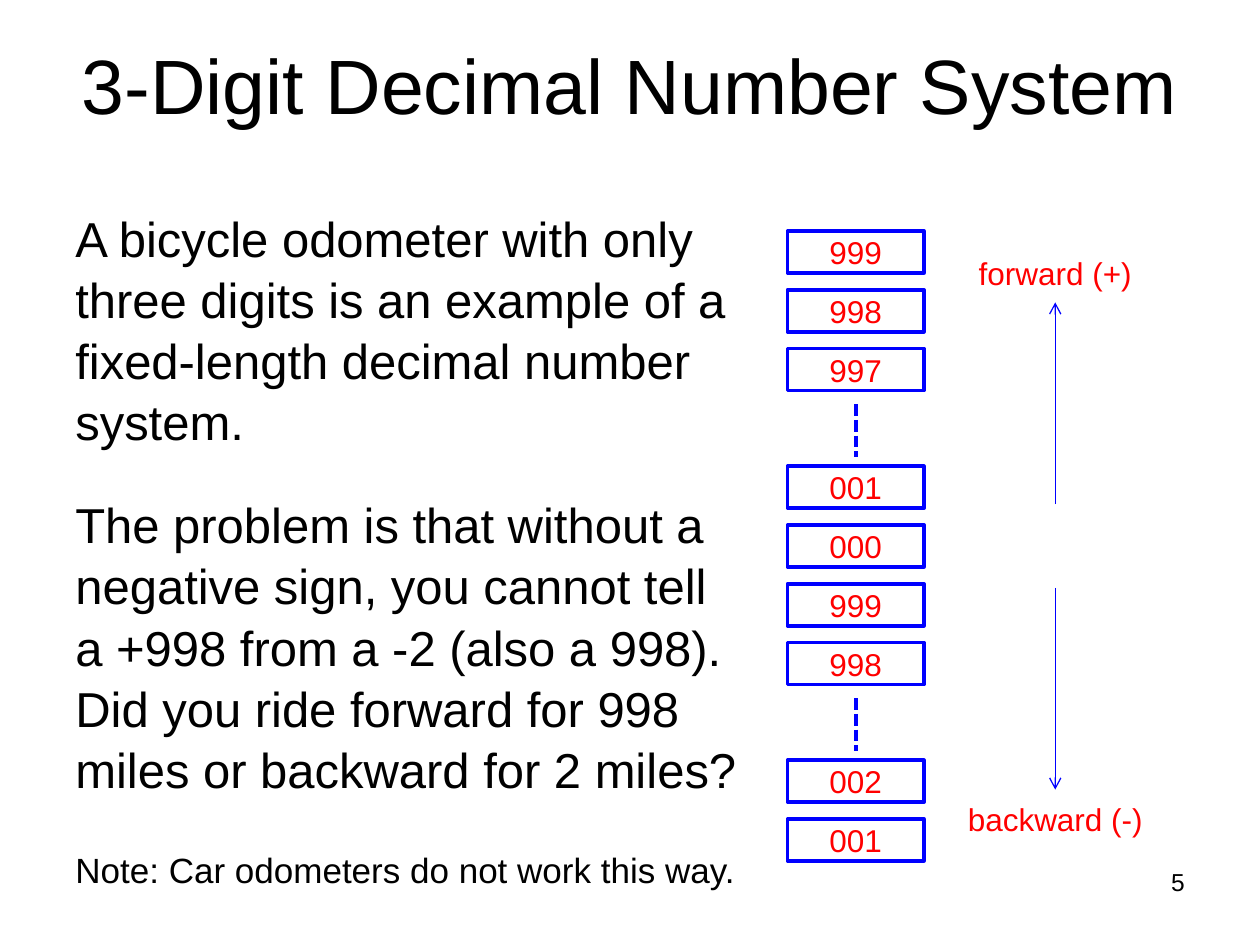
from dataclasses import dataclass
from typing import NamedTuple

from lxml.etree import SubElement
from pptx import Presentation
from pptx.dml.color import RGBColor
from pptx.enum.dml import MSO_LINE
from pptx.enum.shapes import MSO_CONNECTOR, MSO_SHAPE
from pptx.enum.text import MSO_ANCHOR, PP_ALIGN
from pptx.oxml.ns import qn
from pptx.util import Inches, Pt


@dataclass(frozen=True)
class Theme:
    font: str = "Arial"
    ink: RGBColor = RGBColor(0, 0, 0)
    accent: RGBColor = RGBColor(255, 0, 0)
    outline: RGBColor = RGBColor(0, 0, 255)
    title: int = 44
    body: int = 28
    note: int = 20
    label: int = 18
    number: int = 14


class Area(NamedTuple):
    column: float
    row: float
    columns: float
    rows: float


class Line(NamedTuple):
    text: str
    size: int
    before: float = 0
    after: float = 0
    spacing: float = 1.0


class Arrow(NamedTuple):
    label: str
    label_area: Area
    start: float
    end: float


THEME = Theme()

# The slide is a grid of 120 columns and 90 rows
UNIT = Inches(10) / 120
COUNTER = Area(75, 22, 13, 4)
COUNTER_STEP = 5.6
COUNTER_AXIS = COUNTER.column + COUNTER.columns / 2
ARROW_AXIS = 100.5
GAP = None
READINGS = ["999", "998", "997", GAP, "001", "000", "999", "998", GAP, "002", "001"]

BODY = [
    Line("A bicycle odometer with only three digits is an example of a "
         "fixed-length decimal number system.", THEME.body, after=24, spacing=1.04),
    Line("The problem is that without a negative sign, you cannot tell a +998 "
         "from a -2 (also a 998). Did you ride forward for 998 miles or "
         "backward for 2 miles?", THEME.body, after=24, spacing=1.04),
    Line("Note: Car odometers do not work this way.", THEME.note, before=4, spacing=1.04),
]
ARROWS = [
    Arrow("forward (+)", Area(91.5, 24, 18, 4), 48, 28.8),
    Arrow("backward (-)", Area(90, 76, 21, 4), 56, 75.2),
]


def grid(*values: float) -> list[int]:
    return [round(value * UNIT) for value in values]


def apply(target, values: dict) -> None:
    for name, value in values.items():
        setattr(target, name, value)


def write(shape, lines: list[Line], color: RGBColor, align=PP_ALIGN.LEFT,
          anchor=MSO_ANCHOR.TOP, inset: float = 0.05) -> None:
    frame = shape.text_frame
    apply(frame, {
        "word_wrap": True, "vertical_anchor": anchor,
        "margin_left": Inches(2 * inset), "margin_right": Inches(2 * inset),
        "margin_top": Inches(inset), "margin_bottom": Inches(inset),
    })
    for index, line in enumerate(lines):
        paragraph = frame.add_paragraph() if index else frame.paragraphs[0]
        paragraph.text = line.text
        apply(paragraph, {
            "alignment": align, "line_spacing": line.spacing,
            "space_before": Pt(line.before), "space_after": Pt(line.after),
        })
        apply(paragraph.font, {"name": THEME.font, "size": Pt(line.size)})
        paragraph.font.color.rgb = color


def add_text(slide, area: Area, lines: list[Line], color: RGBColor = THEME.ink,
             **layout) -> None:
    write(slide.shapes.add_textbox(*grid(*area)), lines, color, **layout)


def add_counter(slide, area: Area, reading: str) -> None:
    shape = slide.shapes.add_shape(MSO_SHAPE.RECTANGLE, *grid(*area))
    shape.shadow.inherit = False
    shape.fill.background()
    shape.line.color.rgb = THEME.outline
    shape.line.width = Pt(2)
    write(shape, [Line(reading, THEME.label)], THEME.accent,
          align=PP_ALIGN.CENTER, anchor=MSO_ANCHOR.MIDDLE, inset=0)


def add_vertical(slide, column: float, start: float, end: float, width: float,
                 dash=None, arrow: bool = False) -> None:
    connector = slide.shapes.add_connector(
        MSO_CONNECTOR.STRAIGHT, *grid(column, start, column, end))
    connector.line.color.rgb = THEME.outline
    apply(connector.line, {"width": Pt(width), "dash_style": dash})
    if arrow:
        SubElement(connector.line._get_or_add_ln(), qn("a:tailEnd"), type="arrow")
    SubElement(connector._element.spPr, qn("a:effectLst"))


def main() -> None:
    presentation = Presentation()
    apply(presentation, {"slide_width": Inches(10), "slide_height": Inches(7.5)})
    slide = presentation.slides.add_slide(presentation.slide_layouts[6])

    # Title, explanation and page number
    add_text(slide, Area(0, 0, 120, 16),
             [Line("3-Digit Decimal Number System", THEME.title)],
             align=PP_ALIGN.CENTER, anchor=MSO_ANCHOR.MIDDLE)
    add_text(slide, Area(6, 19, 66, 68), BODY)
    add_text(slide, Area(86, 82, 28, 6.2), [Line("5", THEME.number)],
             align=PP_ALIGN.RIGHT)

    # Odometer readings, with dashes where readings are skipped
    for index, reading in enumerate(READINGS):
        row = COUNTER.row + index * COUNTER_STEP
        if reading is GAP:
            add_vertical(slide, COUNTER_AXIS, row - 0.3, row + 4.7, 2.25,
                         dash=MSO_LINE.SQUARE_DOT)
        else:
            add_counter(slide, COUNTER._replace(row=row), reading)

    # Directions of travel
    for arrow in ARROWS:
        add_vertical(slide, ARROW_AXIS, arrow.start, arrow.end, 0.75, arrow=True)
        add_text(slide, arrow.label_area, [Line(arrow.label, THEME.label)],
                 THEME.accent, align=PP_ALIGN.CENTER,
                 anchor=MSO_ANCHOR.MIDDLE, inset=0)

    presentation.save("out.pptx")


if __name__ == "__main__":
    main()
